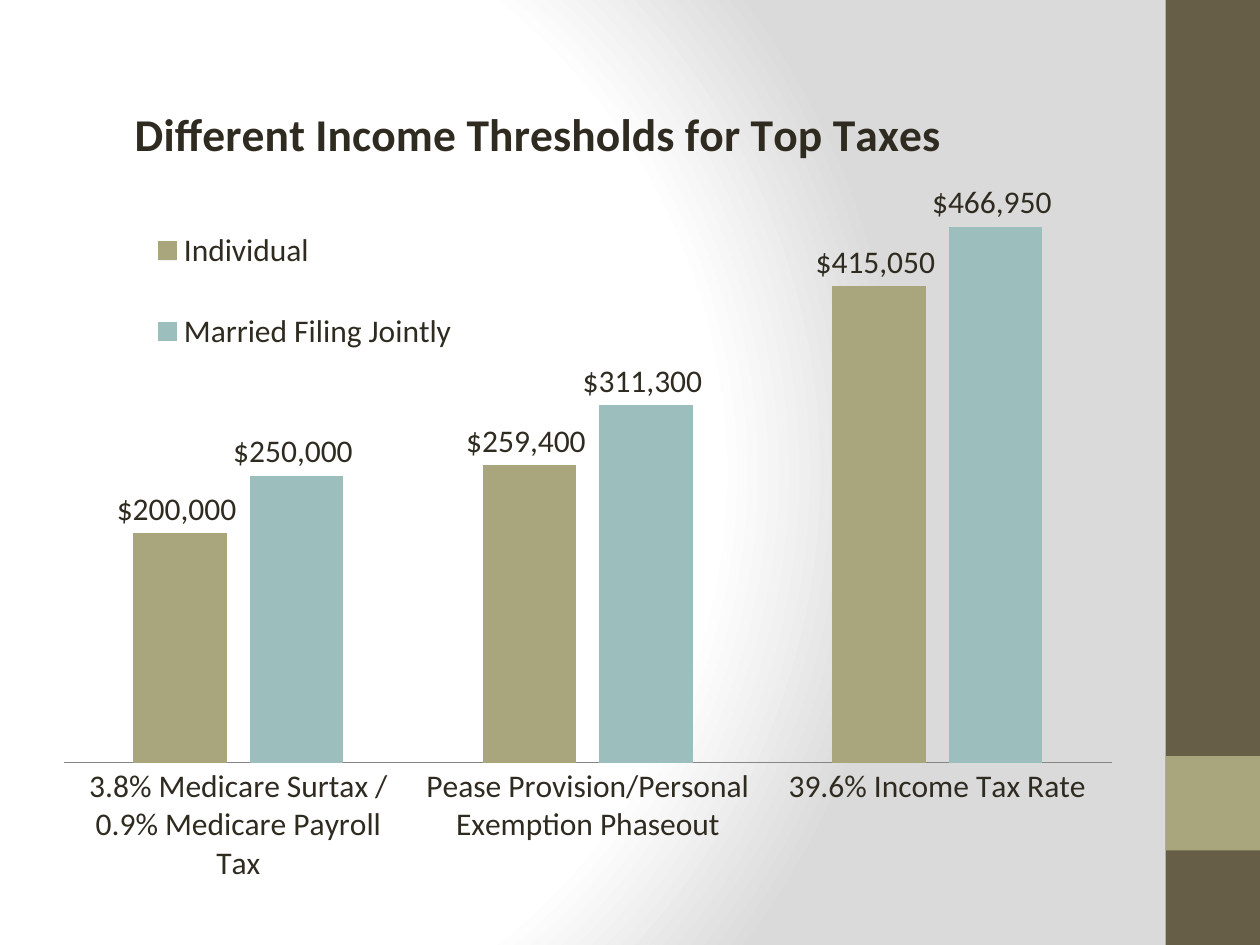
from lxml.etree import SubElement
from pptx import Presentation
from pptx.chart.data import CategoryChartData
from pptx.dml.color import RGBColor
from pptx.enum.chart import XL_CHART_TYPE, XL_LABEL_POSITION, XL_LEGEND_POSITION, XL_TICK_MARK
from pptx.enum.shapes import MSO_SHAPE
from pptx.oxml import parse_xml
from pptx.oxml.ns import qn
from pptx.util import Inches, Pt

HUES = {"ink": "2F2B20", "brown": "675E47", "olive": "A9A57C",
        "teal": "9CBEBD", "axis": "868686", "white": "FFFFFF", "gray": "DADADA"}
MONEY = '"$"#,##0_);[Red]\\("$"#,##0\\)'
CATS = ["3.8% Medicare Surtax / 0.9% Medicare Payroll Tax",
        "Pease Provision/Personal Exemption Phaseout", "39.6% Income Tax Rate"]
ROWS = [
    ("Individual", "olive", [200000, 259400, 415050]),
    ("Married Filing Jointly", "teal", [250000, 311300, 466950]),
]


def color(name):
    return RGBColor.from_string(HUES[name])


def apply(item, values):
    for key, value in values.items():
        setattr(item, key, value)


class Deck:
    def __init__(self, slide):
        self.slide = slide
        self.text = {"name": "Calibri", "size": Pt(18), "bold": False}
        self.head = {**self.text, "size": Pt(26), "bold": True}

    def font(self, font, style):
        apply(font, style)
        font.color.rgb = color("ink")

    def fill(self, fill, name):
        fill.solid()
        fill.fore_color.rgb = color(name)

    def back(self):
        stops = "".join(
            f'<a:gs pos="{pos * 1000}"><a:srgbClr val="{HUES[name]}"/></a:gs>'
            for pos, name in ((0, "white"), (75, "white"), (100, "gray")))
        node = parse_xml(
            '<p:bg xmlns:p="http://schemas.openxmlformats.org/presentationml/2006/main" '
            'xmlns:a="http://schemas.openxmlformats.org/drawingml/2006/main"><p:bgPr>'
            f'<a:gradFill rotWithShape="1"><a:gsLst>{stops}</a:gsLst><a:path path="circle">'
            '<a:fillToRect l="20000" t="50000" r="100000" b="50000"/></a:path></a:gradFill>'
            '<a:effectLst/></p:bgPr></p:bg>')
        self.slide.element.cSld.insert(0, node)

    def bar(self, left, top, width, height, name):
        shape = self.slide.shapes.add_shape(
            MSO_SHAPE.RECTANGLE, *map(Inches, (left, top, width, height)))
        shape.shadow.inherit = False
        self.fill(shape.fill, name)
        shape.line.fill.background()

    def place(self, node, index, inner=False, **spots):
        for old in node.findall(qn("c:layout")):
            node.remove(old)
        layout = SubElement(node, qn("c:layout"))
        node.insert(index, layout)
        manual = SubElement(layout, qn("c:manualLayout"))
        pairs = [("layoutTarget", "inner")] if inner else []
        pairs += [("xMode", "edge"), ("yMode", "edge"), *spots.items()]
        for tag, value in pairs:
            SubElement(manual, qn(f"c:{tag}")).set("val", str(value))

    def chart(self, left, top, width, height, title):
        data = CategoryChartData(number_format=MONEY)
        data.categories = CATS
        for name, _, values in ROWS:
            data.add_series(name, values)
        chart = self.slide.shapes.add_chart(
            XL_CHART_TYPE.COLUMN_CLUSTERED,
            *map(Inches, (left, top, width, height)), data).chart
        self.font(chart.font, self.text)
        self.title(chart, title)
        self.legend(chart)
        self.axes(chart)
        self.plot(chart)

    def title(self, chart, words):
        title = chart.chart_title
        title.text_frame.text = words
        self.font(title.text_frame.paragraphs[0].runs[0].font, self.head)
        self.place(title._element, 1, x=0.06, y=0)

    def legend(self, chart):
        chart.has_legend = True
        legend = chart.legend
        apply(legend, {"position": XL_LEGEND_POSITION.TOP, "include_in_layout": False})
        self.font(legend.font, self.text)
        self.place(legend._element, 1, x=0.08, y=0.12, w=0.3, h=0.26)

    def axes(self, chart):
        apply(chart.value_axis, {"visible": False, "has_major_gridlines": False,
                                 "minimum_scale": 0, "maximum_scale": 500000})
        axis = chart.category_axis
        apply(axis, {"major_tick_mark": XL_TICK_MARK.NONE, "minor_tick_mark": XL_TICK_MARK.NONE})
        self.font(axis.tick_labels.font, self.text)
        axis.format.line.color.rgb = color("axis")
        axis.format.line.width = Pt(0.75)

    def plot(self, chart):
        plot = chart.plots[0]
        apply(plot, {"gap_width": 150, "overlap": -25, "vary_by_categories": False})
        for series, (_, hue, _) in zip(plot.series, ROWS):
            self.fill(series.format.fill, hue)
            labels = series.data_labels
            apply(labels, {"show_value": True, "number_format": MONEY,
                           "number_format_is_linked": False,
                           "position": XL_LABEL_POSITION.OUTSIDE_END})
            self.font(labels.font, self.text)
        area = chart._chartSpace.chart.plotArea
        self.place(area, 0, inner=True, x=0, y=0.12, w=1, h=0.73)


def main():
    show = Presentation()
    apply(show, {"slide_width": Inches(10), "slide_height": Inches(7.5)})
    deck = Deck(show.slides.add_slide(show.slide_layouts[6]))
    deck.back()
    deck.bar(9.25, 0, 0.75, 7.5, "brown")
    deck.bar(9.25, 6, 0.75, 0.75, "olive")
    deck.chart(0.5, 0.75, 8.33, 6.25, "Different Income Thresholds for Top Taxes")
    show.save("out.pptx")


if __name__ == "__main__":
    main()
